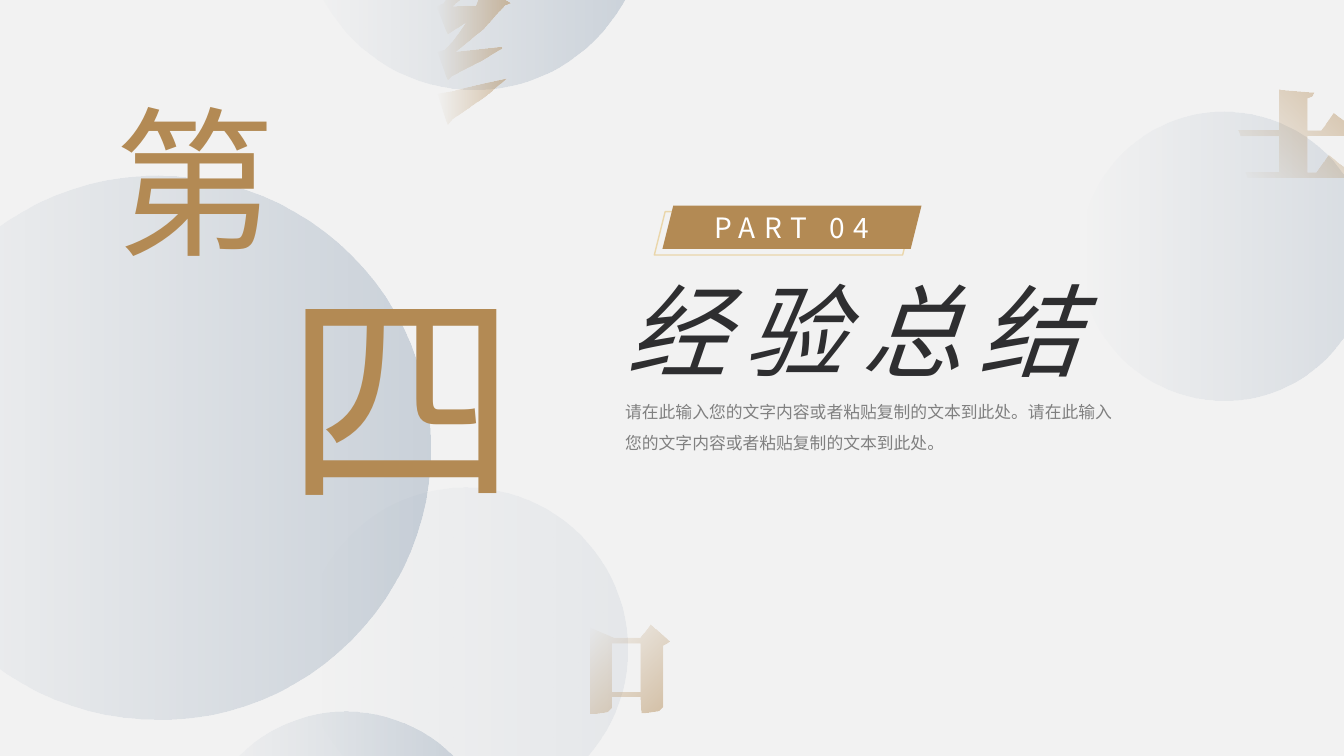
"""Build the section slide for part four."""
from dataclasses import dataclass

import lxml.etree
import pptx
import pptx.dml.color
import pptx.enum.shapes
import pptx.enum.text
import pptx.oxml.ns
import pptx.util

Inches = pptx.util.Inches
PP_ALIGN = pptx.enum.text.PP_ALIGN
ANCHOR = pptx.enum.text.MSO_ANCHOR
SHAPE = pptx.enum.shapes.MSO_SHAPE
Box = tuple[float, float, float, float]
Points = list[tuple[int, int]]

FONT = "Noto Sans CJK SC"
COLORS = {
    "background": "F2F2F2",
    "mist": "6A839F",
    "gold": "B38A54",
    "outline": "EAD6AA",
    "title": "2E2E30",
    "body": "808080",
    "white": "FFFFFF",
}


@dataclass
class Circle:
    left: float
    top: float
    size: float
    alpha: int


@dataclass
class Brushwork:
    """Contours in hundredths of an inch, measured from left and top."""
    left: float
    top: float
    angle: int
    contours: list[Points]


@dataclass
class Label:
    text: str
    box: Box
    size: int
    color: str
    spacing: int = 0
    align: PP_ALIGN = PP_ALIGN.LEFT
    italic: bool = False
    line: float = 1.0


def bar_start(x: int, y: int) -> Points:
    """Return the slanted left end of a horizontal brush bar."""
    return [(x + 2, y + 6), (x, y)]


def bar_tip(x: int, y: int) -> Points:
    """Return the peaked right end of a horizontal brush bar."""
    return [(x, y), (x + 12, y - 17), (x + 36, y + 2), (x + 30, y + 6)]


def post_foot(x: int, y: int) -> Points:
    """Return the swept foot of a vertical brush post."""
    return [(x, y), (x - 4, y + 4), (x - 17, y + 6), (x - 21, y + 6)]


def earth_contours() -> list[Points]:
    """Return one stem crossed by two bars."""
    left, right = 40, 68
    upper, lower = 40, 81
    stem_top = [(left, 0), (75, 3), (73, 7), (right, 9)]
    right_side = [(right, upper), *bar_tip(82, upper), (right, upper + 6),
                  (right, lower), *bar_tip(77, lower)]
    left_side = [*bar_start(7, lower), (left, lower), (left, upper + 6),
                 *bar_start(0, upper), (left, upper)]
    return [stem_top + right_side + left_side]


def mouth_contours() -> list[Points]:
    """Return a frame of two posts around a rectangular opening."""
    left, right, top, bottom = 21, 49, 19, 66
    roof = [(0, 3), (23, 13), (right, 13), (59, 0), (78, 17), (71, 21)]
    sill = [(right, bottom + 5), (left, bottom + 5)]
    frame = roof + post_foot(71, 81) + sill + post_foot(left, 82)
    opening = [(left, top), (left, bottom), (right, bottom), (right, top)]
    return [frame, opening]


def silk_contours() -> list[Points]:
    """Return the folded thread and the separate sweep below it."""
    upper_fold = [(30, 0), (59, 13), (53, 16), (36, 35), (16, 52), (39, 51)]
    lower_fold = [(46, 33), (73, 49), (67, 51), (46, 75), (19, 97), (64, 92)]
    hook = [(64, 94), (44, 106), (15, 121), (11, 125), (1, 97), (8, 95)]
    return_edge = [(18, 84), (29, 68), (11, 80), (0, 52), (7, 49), (16, 36), (24, 18)]
    sweep = [(69, 123), (48, 141), (16, 163), (11, 169), (1, 138), (18, 135), (42, 129)]
    return [upper_fold + lower_fold + hook + return_edge, sweep]


CIRCLES = [
    Circle(-1.13, 1.74, 5.4, 30),
    Circle(3.01, 4.84, 3.21, 10),
    Circle(1.94, 7.06, 2.98, 30),
    Circle(10.71, 1.11, 2.86, 20),
    Circle(3.01, -2.49, 3.38, 30),
]
BRUSHWORKS = [
    Brushwork(12.28, 0.89, 225, earth_contours()),
    Brushwork(5.86, 6.2, 135, mouth_contours()),
    Brushwork(4.33, -0.46, 180, silk_contours()),
]
NUMERALS = [
    Label("第", (0.73, 0.77, 2.4, 2.02), 115, "gold", 12, PP_ALIGN.CENTER),
    Label("四", (2.73, 2.45, 2.4, 2.87), 166, "gold", 12, PP_ALIGN.CENTER),
]
BANNER = Label("PART 04", (6.57, 2.04, 2.57, 0.43), 20, "white", 6, PP_ALIGN.CENTER)
TITLE = Label("经验总结", (6.11, 2.62, 6.09, 1.3), 72, "title", 12, italic=True)
BODY = Label("请在此输入您的文字内容或者粘贴复制的文本到此处。请在此输入您的文字内容或者粘贴复制的文本到此处。",
             (6.1, 3.84, 5.12, 0.7), 12, "body", line=1.5)


def rgb(name: str) -> pptx.dml.color.RGBColor:
    return pptx.dml.color.RGBColor.from_string(COLORS[name])


def fade(sp, color: str, alpha: int, angle: int) -> None:
    """Fill a shape with one colour that fades out, without line or shadow."""
    sp.shadow.inherit = False
    sp.line.fill.background()
    sp.fill.gradient()
    sp.fill.gradient_angle = angle
    for stop in sp.fill.gradient_stops:
        stop.color.rgb = rgb(color)
    stop_colors = sp.element.xpath(".//a:gradFill//a:srgbClr")
    for stop_color, opacity in zip(stop_colors, (alpha, 0)):
        node = lxml.etree.SubElement(stop_color, pptx.oxml.ns.qn("a:alpha"))
        node.set("val", str(opacity * 1000))


def add_circle(s, circle: Circle) -> None:
    box = (circle.left, circle.top, circle.size, circle.size)
    sp = s.shapes.add_shape(SHAPE.OVAL, *map(Inches, box))
    fade(sp, "mist", circle.alpha, 180)


def add_brushwork(s, brushwork: Brushwork) -> None:
    builder = s.shapes.build_freeform(*brushwork.contours[0][0], scale=Inches(0.01))
    for start, *rest in brushwork.contours:
        builder.move_to(*start)
        builder.add_line_segments(rest, close=True)
    sp = builder.convert_to_shape(Inches(brushwork.left), Inches(brushwork.top))
    fade(sp, "gold", 50, brushwork.angle)


def write(sp, label: Label, anchor: ANCHOR = ANCHOR.TOP) -> None:
    """Place a shape and give it the formatted text of its label."""
    sp.left, sp.top, sp.width, sp.height = map(Inches, label.box)
    tf = sp.text_frame
    tf.text = label.text
    tf.word_wrap = True
    tf.auto_size = pptx.enum.text.MSO_AUTO_SIZE.NONE
    tf.vertical_anchor = anchor
    p = tf.paragraphs[0]
    p.alignment = label.align
    p.line_spacing = label.line
    p.space_before = pptx.util.Pt(0)
    r = p.runs[0]
    r.font.size = pptx.util.Pt(label.size)
    r.font.italic = label.italic
    r.font.color.rgb = rgb(label.color)
    r.font.name = FONT
    props = sp.element.xpath(".//a:r/a:rPr")[0]
    props.set("spc", str(label.spacing * 100))
    lxml.etree.SubElement(props, pptx.oxml.ns.qn("a:ea")).set("typeface", FONT)


def add_banner(s) -> None:
    """Draw the gold banner over its shifted outline."""
    left, top, width, height = BANNER.box
    outline_box = (left - 0.08, top + 0.06, width, height)
    outline, front = [s.shapes.add_shape(SHAPE.PARALLELOGRAM, *map(Inches, box))
                      for box in (outline_box, BANNER.box)]
    outline.shadow.inherit = front.shadow.inherit = False
    outline.fill.background()
    outline.line.color.rgb = rgb("outline")
    outline.line.width = pptx.util.Pt(1)
    front.fill.solid()
    front.fill.fore_color.rgb = rgb("gold")
    front.line.fill.background()
    write(front, BANNER, ANCHOR.MIDDLE)
    front.text_frame.margin_left = front.text_frame.margin_right = Inches(0.04)


def main() -> None:
    prs = pptx.Presentation()
    prs.slide_width, prs.slide_height = Inches(13.33), Inches(7.5)
    s = prs.slides.add_slide(prs.slide_layouts[0])
    s.background.fill.solid()
    s.background.fill.fore_color.rgb = rgb("background")
    for circle in CIRCLES:
        add_circle(s, circle)
    for brushwork in BRUSHWORKS:
        add_brushwork(s, brushwork)
    for numeral in NUMERALS:
        write(s.shapes.add_textbox(*map(Inches, numeral.box)), numeral)
    add_banner(s)
    for sp, label in zip(list(s.placeholders), (TITLE, BODY)):
        write(sp, label)
        s.shapes.element.append(sp.element)
    prs.save("out.pptx")


if __name__ == "__main__":
    main()
